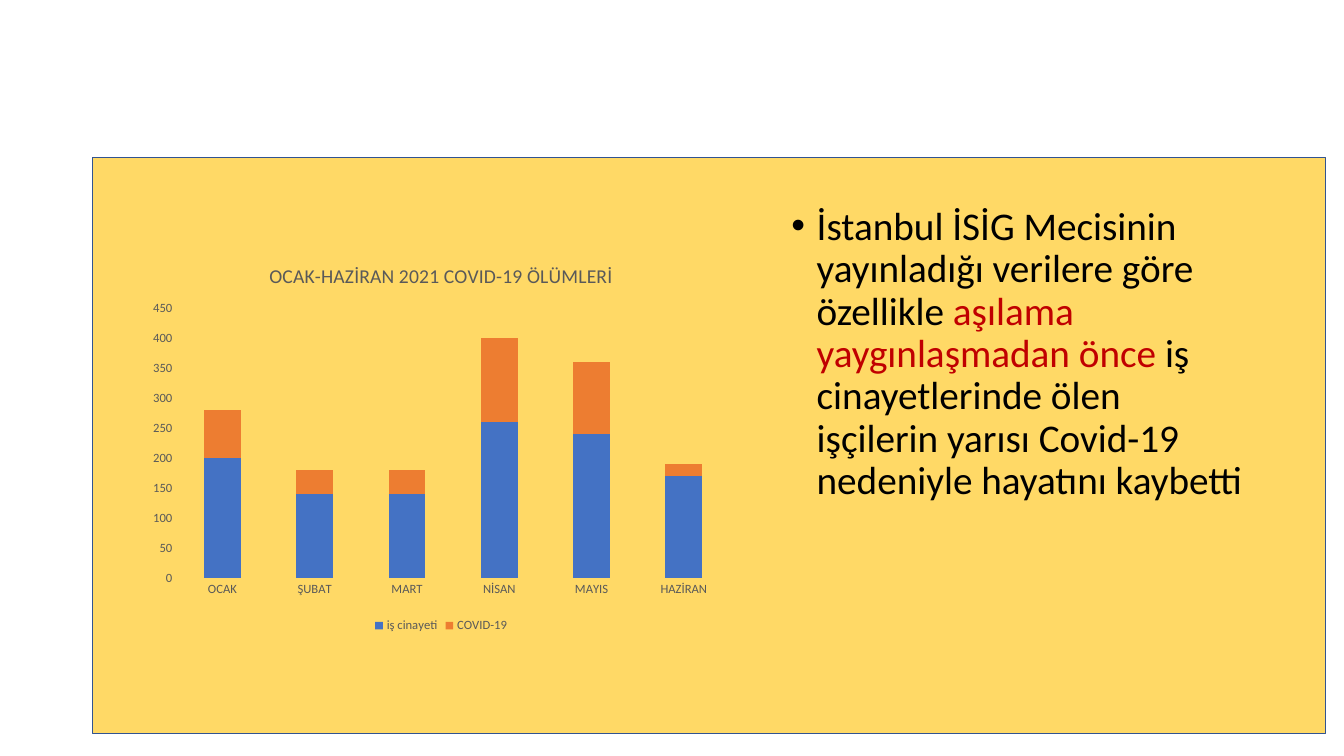
from lxml import etree
from pptx import Presentation
from pptx.chart.data import CategoryChartData
from pptx.dml.color import RGBColor
from pptx.enum.chart import XL_CHART_TYPE, XL_LEGEND_POSITION, XL_TICK_MARK
from pptx.enum.shapes import MSO_SHAPE
from pptx.enum.text import MSO_ANCHOR, MSO_AUTO_SIZE
from pptx.oxml import parse_xml
from pptx.oxml.ns import nsdecls, qn
from pptx.util import Inches, Pt

STACKED = XL_CHART_TYPE.COLUMN_STACKED
BOTTOM = XL_LEGEND_POSITION.BOTTOM
NO_TICK = XL_TICK_MARK.NONE
TITLE_AND_CONTENT = 1

BLACK, GREY, RED = "000000", "595959", "C00000"
MONTHS = ["OCAK", "ŞUBAT", "MART", "NİSAN", "MAYIS", "HAZİRAN"]
SERIES = [
    ("iş cinayeti", [200, 140, 140, 260, 240, 170], "4472C4"),
    ("COVID-19", [80, 40, 40, 140, 120, 20], "ED7D31"),
]
MESSAGE = [
    ("İstanbul İSİG Mecisinin yayınladığı verilere göre özellikle ", BLACK),
    ("aşılama yaygınlaşmadan önce ", RED),
    ("iş cinayetlerinde ölen işçilerin yarısı Covid-19 nedeniyle hayatını kaybetti", BLACK),
]
PLOT_LAYOUT = {"x": 0.06, "y": 0.16, "w": 0.92, "h": 0.69}


def color(hex_string):
    return RGBColor.from_string(hex_string)


def format_font(font, size, hex_string):
    values = {"name": "Calibri", "size": Pt(size), "bold": False}
    for name, value in values.items():
        setattr(font, name, value)
    font.color.rgb = color(hex_string)


presentation = Presentation()
presentation.slide_width = Inches(13.33)
presentation.slide_height = Inches(7.5)
slide = presentation.slides.add_slide(presentation.slide_layouts[TITLE_AND_CONTENT])
title = slide.shapes.title._element
title.getparent().remove(title)
body = slide.placeholders[1]

# Yellow panel behind the text
panel = slide.shapes.add_shape(
    MSO_SHAPE.RECTANGLE, Inches(0.92), Inches(1.56), Inches(12.23), Inches(5.72))
panel.shadow.inherit = False
panel.fill.solid()
panel.fill.fore_color.rgb = color("FFD966")
panel.line.color.rgb = color("325491")
panel.line.width = Pt(1)
body._element.addprevious(panel._element)

# Message
body_place = {"left": 7.75, "top": 2, "width": 4.67, "height": 4.76}
for name, value in body_place.items():
    setattr(body, name, Inches(value))
frame = body.text_frame
frame.word_wrap = True
frame.auto_size = MSO_AUTO_SIZE.NONE
frame.vertical_anchor = MSO_ANCHOR.TOP
paragraph = frame.paragraphs[0]
paragraph.line_spacing = 0.9
paragraph.space_before = Pt(0)
properties = paragraph._p.get_or_add_pPr()
properties.set("marL", str(Inches(0.25)))
properties.set("indent", str(Inches(-0.25)))
etree.SubElement(properties, qn("a:buFont"), typeface="Arial")
etree.SubElement(properties, qn("a:buChar"), char="•")
for text, hex_string in MESSAGE:
    run = paragraph.add_run()
    run.text = text
    format_font(run.font, 28, hex_string)

# Monthly deaths chart
chart_data = CategoryChartData()
chart_data.categories = MONTHS
for name, values, _ in SERIES:
    chart_data.add_series(name, values)
chart = slide.shapes.add_chart(
    STACKED, Inches(1.39), Inches(2.44), Inches(5.97), Inches(3.88), chart_data).chart
format_font(chart.font, 10, BLACK)

chart.has_title = True
chart_title = chart.chart_title.text_frame
chart_title.text = "OCAK-HAZİRAN 2021 COVID-19 ÖLÜMLERİ"
format_font(chart_title.paragraphs[0].runs[0].font, 14, GREY)
chart.chart_title.include_in_layout = False

chart.has_legend = True
chart.legend.position = BOTTOM
chart.legend.include_in_layout = False
format_font(chart.legend.font, 9, GREY)

for axis in (chart.category_axis, chart.value_axis):
    axis.has_major_gridlines = False
    axis.major_tick_mark = NO_TICK
    axis.minor_tick_mark = NO_TICK
    axis.format.line.fill.background()
    format_font(axis.tick_labels.font, 9, GREY)
chart.value_axis.minimum_scale = 0
chart.value_axis.maximum_scale = 450
chart.value_axis.major_unit = 50

plot = chart.plots[0]
plot.gap_width = 150
plot.overlap = 100
plot.vary_by_categories = False
for series, (_, _, hex_string) in zip(plot.series, SERIES):
    series.format.fill.solid()
    series.format.fill.fore_color.rgb = color(hex_string)

# Fixed inner plot area, as fractions of the chart
plot_area = chart._chartSpace.chart.plotArea
for layout in plot_area.findall(qn("c:layout")):
    plot_area.remove(layout)
sizes = "".join(f'<c:{key} val="{value}"/>' for key, value in PLOT_LAYOUT.items())
plot_area.insert(0, parse_xml(
    f'<c:layout {nsdecls("c")}><c:manualLayout><c:layoutTarget val="inner"/>'
    f'<c:xMode val="edge"/><c:yMode val="edge"/>{sizes}</c:manualLayout></c:layout>'))

presentation.save("out.pptx")
